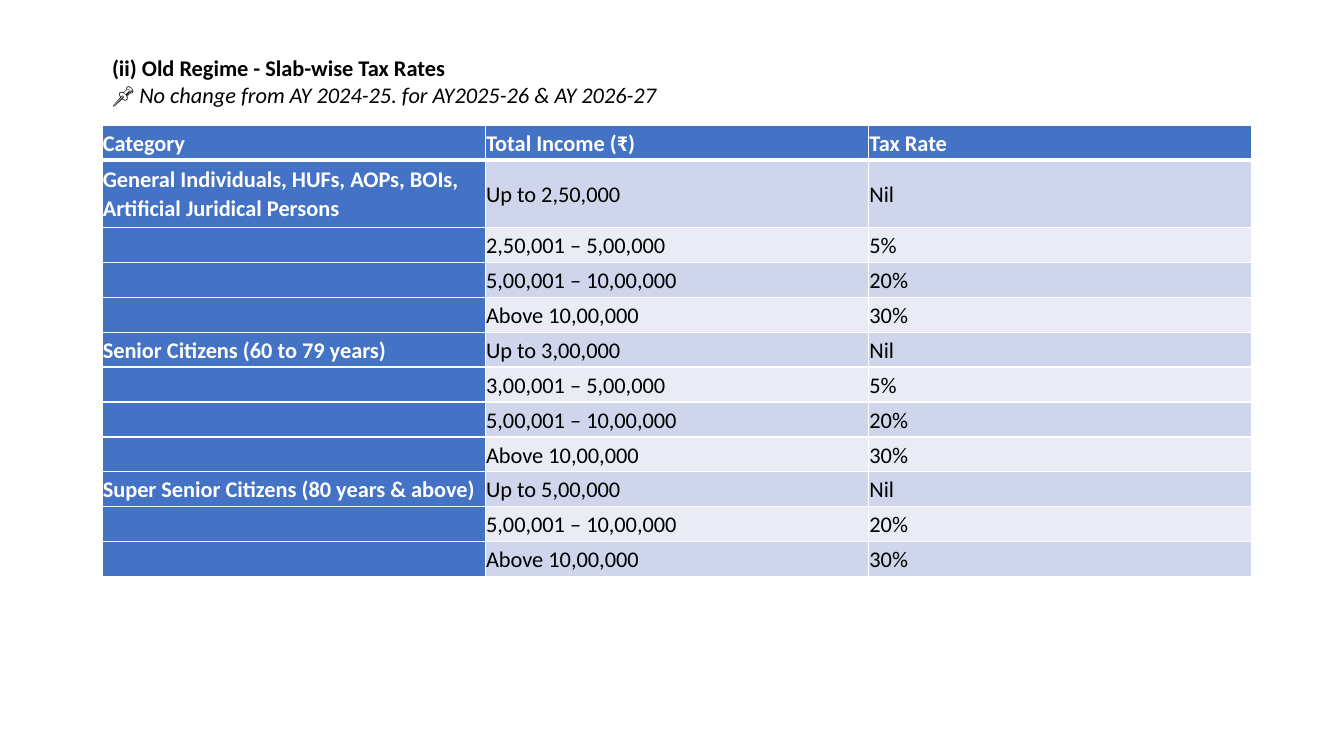
from dataclasses import dataclass

from lxml.etree import SubElement
from pptx import Presentation
from pptx.dml.color import RGBColor
from pptx.enum.text import MSO_ANCHOR, MSO_AUTO_SIZE, PP_ALIGN
from pptx.oxml.ns import qn
from pptx.util import Cm, Pt


@dataclass(frozen=True)
class Theme:
    font: str = "Calibri"
    size: int = 16
    black: str = "000000"
    white: str = "FFFFFF"
    header: str = "4472C4"
    bands: tuple = ("E9EBF5", "CFD5EA")


theme = Theme()


def style_paragraph(paragraph, color, bold):
    paragraph.font.name = theme.font
    paragraph.font.size = Pt(theme.size)
    paragraph.font.bold = bold
    paragraph.font.color.rgb = RGBColor.from_string(color)


def add_border(cell, side, points):
    line = SubElement(cell._tc.get_or_add_tcPr(), qn(f"a:ln{side}"), w=str(Pt(points)))
    fill = SubElement(line, qn("a:solidFill"))
    SubElement(fill, qn("a:srgbClr"), val=theme.white)


presentation = Presentation()
presentation.slide_width = Cm(33.87)
presentation.slide_height = Cm(19.05)
slide = presentation.slides.add_slide(presentation.slide_layouts[5])

title = slide.shapes.title
title.left, title.top, title.width, title.height = Cm(2.57), Cm(1.24), Cm(14.63), Cm(1.78)
title_frame = title.text_frame
title_frame.word_wrap = False
title_frame.auto_size = MSO_AUTO_SIZE.NONE
title_frame.vertical_anchor = MSO_ANCHOR.TOP
heading = title_frame.paragraphs[0]
heading.text = "(ii) Old Regime - Slab-wise Tax Rates"
note = title_frame.add_paragraph()
note.add_run().text = "📌 "
note_text = note.add_run()
note_text.text = "No change from AY 2024-25. for AY2025-26 & AY 2026-27"
note_text.font.italic = True
for paragraph, bold in ((heading, True), (note, False)):
    paragraph.alignment = PP_ALIGN.LEFT
    paragraph.space_before = Pt(0)
    style_paragraph(paragraph, theme.black, bold)

rows = [
    ("Category", "Total Income (₹)", "Tax Rate"),
    ("General Individuals, HUFs, AOPs, BOIs, Artificial Juridical Persons", "Up to 2,50,000", "Nil"),
    ("", "2,50,001 – 5,00,000", "5%"),
    ("", "5,00,001 – 10,00,000", "20%"),
    ("", "Above 10,00,000", "30%"),
    ("Senior Citizens (60 to 79 years)", "Up to 3,00,000", "Nil"),
    ("", "3,00,001 – 5,00,000", "5%"),
    ("", "5,00,001 – 10,00,000", "20%"),
    ("", "Above 10,00,000", "30%"),
    ("Super Senior Citizens (80 years & above)", "Up to 5,00,000", "Nil"),
    ("", "5,00,001 – 10,00,000", "20%"),
    ("", "Above 10,00,000", "30%"),
]
row_height, tall_row_height, column_width = Cm(0.88), Cm(1.7), Cm(9.66)
table_height = row_height * (len(rows) - 1) + tall_row_height
table = slide.shapes.add_table(
    len(rows), 3, Cm(2.57), Cm(3.15), column_width * 3, table_height
).table
table.first_col = True
for column in table.columns:
    column.width = column_width

for row_index, row in enumerate(rows):
    table.rows[row_index].height = tall_row_height if row_index == 1 else row_height
    for column_index, text in enumerate(row):
        cell = table.cell(row_index, column_index)
        is_header = row_index == 0 or column_index == 0
        cell.margin_left = cell.margin_right = cell.margin_top = cell.margin_bottom = Cm(0.02)
        cell.vertical_anchor = MSO_ANCHOR.MIDDLE
        add_border(cell, "L", 1)
        add_border(cell, "R", 1)
        add_border(cell, "T", 3 if row_index == 1 else 1)
        add_border(cell, "B", 3 if row_index == 0 else 1)
        cell.fill.solid()
        cell.fill.fore_color.rgb = RGBColor.from_string(
            theme.header if is_header else theme.bands[row_index % 2]
        )
        paragraph = cell.text_frame.paragraphs[0]
        if text:
            paragraph.text = text
        paragraph.line_spacing = 1.07
        paragraph.space_after = Pt(8)
        style_paragraph(paragraph, theme.white if is_header else theme.black, is_header)

presentation.save("out.pptx")
